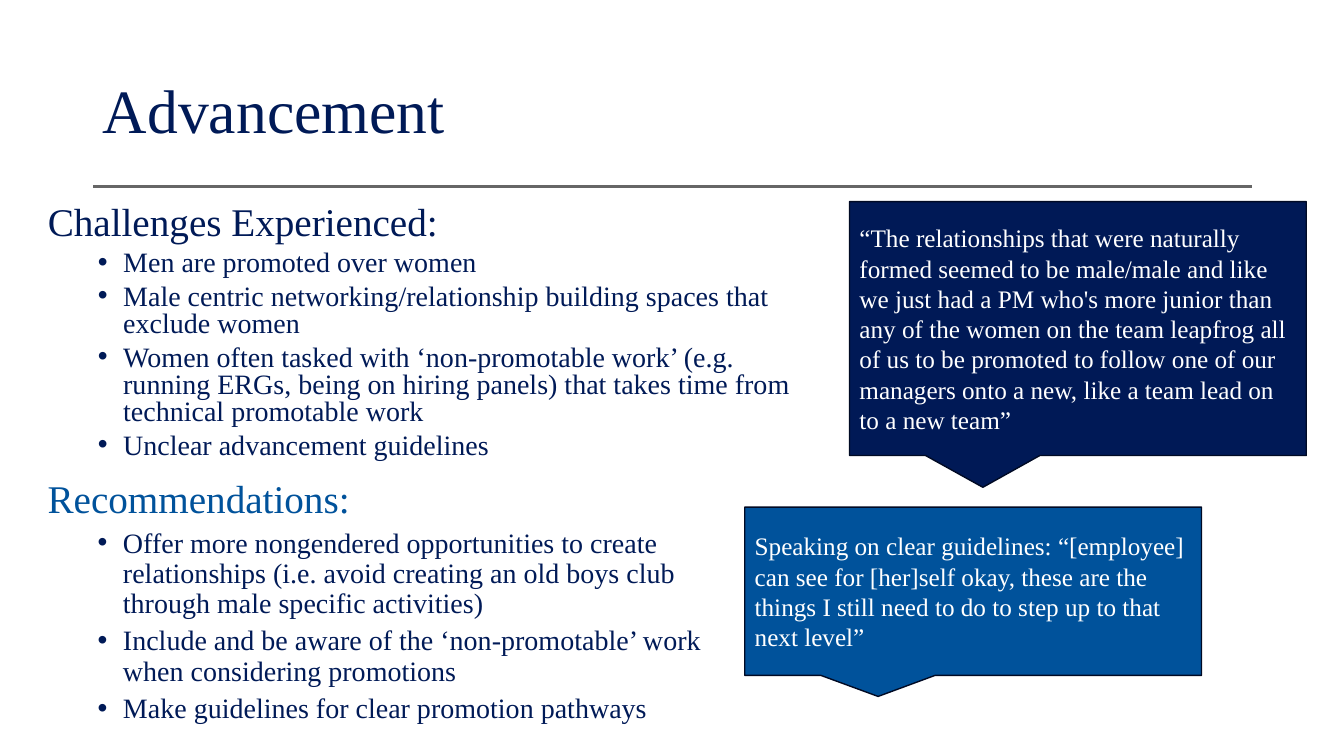
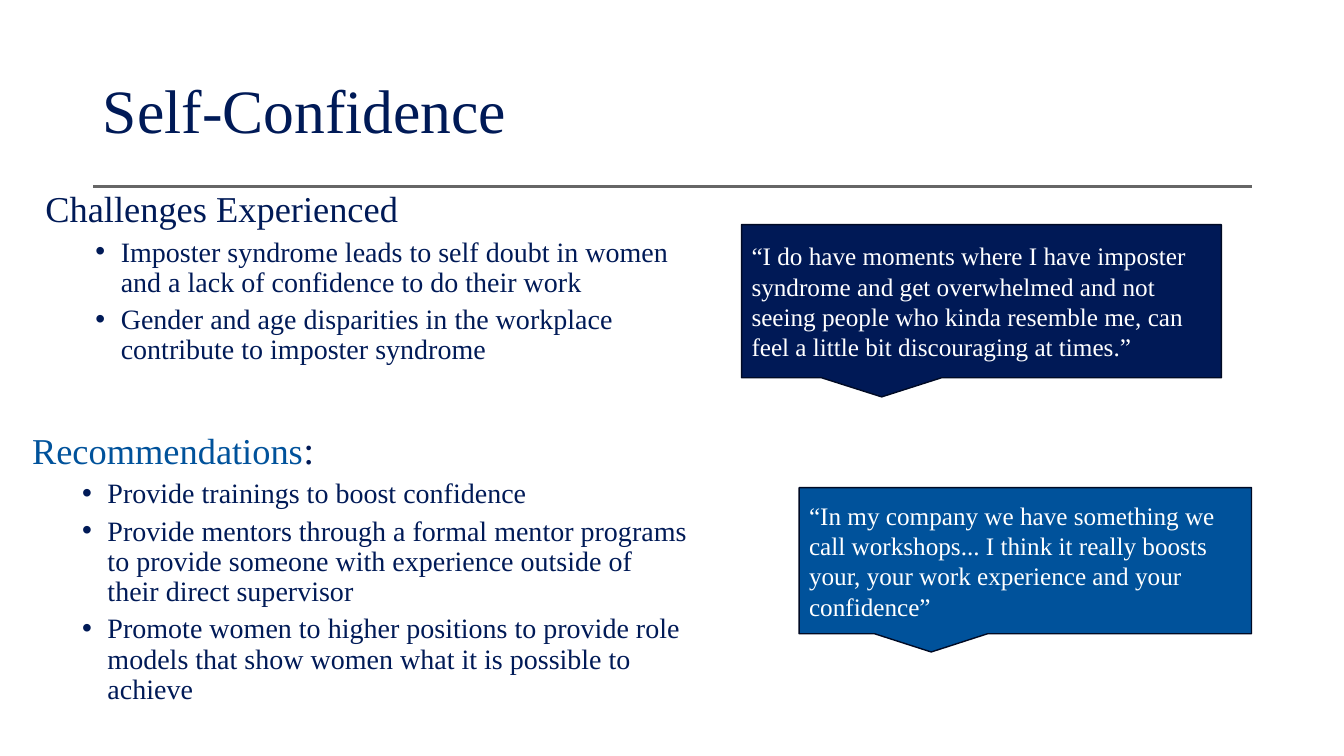
from dataclasses import dataclass

import lxml.etree
import pptx
import pptx.dml.color
import pptx.enum.shapes
import pptx.enum.text
import pptx.oxml.ns
import pptx.util
from pptx.util import Cm, Pt

COLORS = {
    "text": "001A57",
    "navy": "001956",
    "blue": "00529B",
    "outline": "000A24",
    "rule": "666666",
    "white": "FFFFFF",
}
FONT = "Times New Roman"
TITLE_SIZE, BULLET_SIZE, QUOTE_SIZE = 44, 20, 18
BULLET_LEFT, BULLET_HANG = Cm(1.9), Cm(0.64)
RULE_LEFT, RULE_RIGHT, RULE_TOP = Cm(2.34), Cm(31.55), Cm(4.7)
TITLE_TOP = Cm(1.02)


@dataclass(frozen=True)
class Box:
    """Left, top, width and height in centimetres."""
    left: float
    top: float
    width: float
    height: float


@dataclass(frozen=True)
class Span:
    text: str
    size: int
    color: str


@dataclass(frozen=True)
class Section:
    box: Box
    heading: list[Span]
    bullets: list[str]
    quote: str
    quote_box: Box
    quote_fill: str
    spacing: float = 0.9


@dataclass(frozen=True)
class Topic:
    title: str
    challenges: Section
    recommendations: Section


TOPICS = [
    Topic(
        "Advancement",
        Section(
            Box(0.95, 5.08, 19.63, 7.34),
            [Span("Challenges Experienced:", 28, "text")],
            [
                "Men are promoted over women",
                "Male centric networking/relationship building spaces that exclude women",
                "Women often tasked with ‘non-promotable work’ (e.g. running ERGs, being on "
                "hiring panels) that takes time from technical promotable work",
                "Unclear advancement guidelines",
            ],
            "“The relationships that were naturally formed seemed to be male/male and like we "
            "just had a PM who's more junior than any of the women on the team leapfrog all of "
            "us to be promoted to follow one of our managers onto a new, like a team lead on "
            "to a new team”",
            Box(21.41, 5.08, 11.51, 6.4),
            "navy",
            spacing=0.8,
        ),
        Section(
            Box(0.95, 11.96, 17.83, 6.55),
            [Span("Recommendations:", 28, "blue")],
            [
                "Offer more nongendered opportunities to create relationships (i.e. avoid "
                "creating an old boys club through male specific activities)",
                "Include and be aware of the ‘non-promotable’ work when considering promotions",
                "Make guidelines for clear promotion pathways",
            ],
            "Speaking on clear guidelines: “[employee] can see for [her]self okay, these are "
            "the things I still need to do to step up to that next level”",
            Box(18.77, 12.78, 11.51, 4.24),
            "blue",
        ),
    ),
    Topic(
        "Self-Confidence",
        Section(
            Box(0.89, 4.7, 17.07, 6.53),
            [Span("Challenges Experienced", 26, "text")],
            [
                "Imposter syndrome leads to self doubt in women and a lack of confidence to do "
                "their work",
                "Gender and age disparities in the workplace contribute to imposter syndrome",
            ],
            "“I do have moments where I have imposter syndrome and get overwhelmed and not "
            "seeing people who kinda resemble me, can feel a little bit discouraging at times.”",
            Box(18.69, 5.66, 12.09, 3.86),
            "navy",
        ),
        Section(
            Box(0.56, 10.72, 17.07, 8.33),
            [Span("Recommendations", 26, "blue"), Span(":", 28, "text")],
            [
                "Provide trainings to boost confidence",
                "Provide mentors through a formal mentor programs to provide someone with "
                "experience outside of their direct supervisor",
                "Promote women to higher positions to provide role models that show women what "
                "it is possible to achieve",
            ],
            "“In my company we have something we call workshops... I think it really boosts "
            "your, your work experience and your confidence”",
            Box(20.14, 12.29, 11.4, 3.68),
            "blue",
        ),
    ),
]


def rgb(name: str) -> pptx.dml.color.RGBColor:
    return pptx.dml.color.RGBColor.from_string(COLORS[name])


def lengths(box: Box) -> tuple:
    return Cm(box.left), Cm(box.top), Cm(box.width), Cm(box.height)


def style_run(r, size: int, color: str) -> None:
    r.font.name = FONT
    r.font.size = Pt(size)
    r.font.color.rgb = rgb(color)


def add_child(parent, tag: str, **attributes: str):
    return lxml.etree.SubElement(parent, pptx.oxml.ns.qn(tag), attributes)


def set_indent(p, left: int, hang: int, bullet: str = "") -> None:
    """Indent a paragraph and switch its bullet on or off."""
    pPr = p._p.get_or_add_pPr()
    pPr.set("marL", str(int(left)))
    pPr.set("indent", str(-int(hang)))
    if bullet:
        add_child(add_child(pPr, "a:buClr"), "a:srgbClr", val=COLORS["text"])
        add_child(pPr, "a:buFont", typeface="Arial")
        add_child(pPr, "a:buChar", char=bullet)
    else:
        add_child(pPr, "a:buNone")


def add_title(slide, text: str) -> None:
    sp = slide.shapes.title
    sp.left, sp.top = RULE_LEFT, TITLE_TOP
    sp.width, sp.height = RULE_RIGHT - RULE_LEFT, RULE_TOP - TITLE_TOP
    tf = sp.text_frame
    tf.text = text
    tf.auto_size = pptx.enum.text.MSO_AUTO_SIZE.NONE
    tf.vertical_anchor = pptx.enum.text.MSO_ANCHOR.MIDDLE
    p = tf.paragraphs[0]
    p.alignment = pptx.enum.text.PP_ALIGN.LEFT
    p.line_spacing = 0.9
    style_run(p.runs[0], TITLE_SIZE, "text")


def add_rule(slide) -> None:
    line = slide.shapes.add_connector(
        pptx.enum.shapes.MSO_CONNECTOR.STRAIGHT, RULE_RIGHT, RULE_TOP, RULE_LEFT, RULE_TOP)
    line.line.color.rgb = rgb("rule")
    line.line.width = Pt(1.5)
    add_child(line.element.find(pptx.oxml.ns.qn("p:spPr")), "a:effectLst")


def fill_section(sp, section: Section) -> None:
    """Write the heading and its bullets into a placeholder or text box."""
    sp.left, sp.top, sp.width, sp.height = lengths(section.box)
    tf = sp.text_frame
    tf.word_wrap = True
    tf.auto_size = pptx.enum.text.MSO_AUTO_SIZE.NONE
    p = tf.paragraphs[0]
    p.line_spacing = section.spacing
    p.space_before = Pt(0)
    set_indent(p, 0, 0)
    for span in section.heading:
        r = p.add_run()
        r.text = span.text
        style_run(r, span.size, span.color)
    for bullet in section.bullets:
        p = tf.add_paragraph()
        p.text = bullet
        p.level = 1
        p.line_spacing = section.spacing
        p.space_before = Pt(5)
        set_indent(p, BULLET_LEFT, BULLET_HANG, "•")
        style_run(p.runs[0], BULLET_SIZE, "text")


def add_quote(slide, section: Section) -> None:
    sp = slide.shapes.add_shape(
        pptx.enum.shapes.MSO_SHAPE.ROUNDED_RECTANGULAR_CALLOUT, *lengths(section.quote_box))
    for i, value in enumerate((-0.208, 0.625, 0)):
        sp.adjustments[i] = value
    sp.shadow.inherit = False
    sp.fill.solid()
    sp.fill.fore_color.rgb = rgb(section.quote_fill)
    sp.line.color.rgb = rgb("outline")
    sp.line.width = Pt(1)
    tf = sp.text_frame
    tf.text = section.quote
    tf.word_wrap = True
    tf.vertical_anchor = pptx.enum.text.MSO_ANCHOR.MIDDLE
    p = tf.paragraphs[0]
    p.alignment = pptx.enum.text.PP_ALIGN.LEFT
    style_run(p.runs[0], QUOTE_SIZE, "white")


def add_topic(prs, topic: Topic) -> None:
    slide = prs.slides.add_slide(prs.slide_layouts[1])
    add_rule(slide)
    add_title(slide, topic.title)
    fill_section(slide.placeholders[1], topic.challenges)
    add_quote(slide, topic.challenges)
    fill_section(
        slide.shapes.add_textbox(*lengths(topic.recommendations.box)), topic.recommendations)
    add_quote(slide, topic.recommendations)


def main() -> None:
    prs = pptx.Presentation()
    prs.slide_width, prs.slide_height = Cm(33.87), Cm(19.05)
    for topic in TOPICS:
        add_topic(prs, topic)
    prs.save("out.pptx")


if __name__ == "__main__":
    main()
